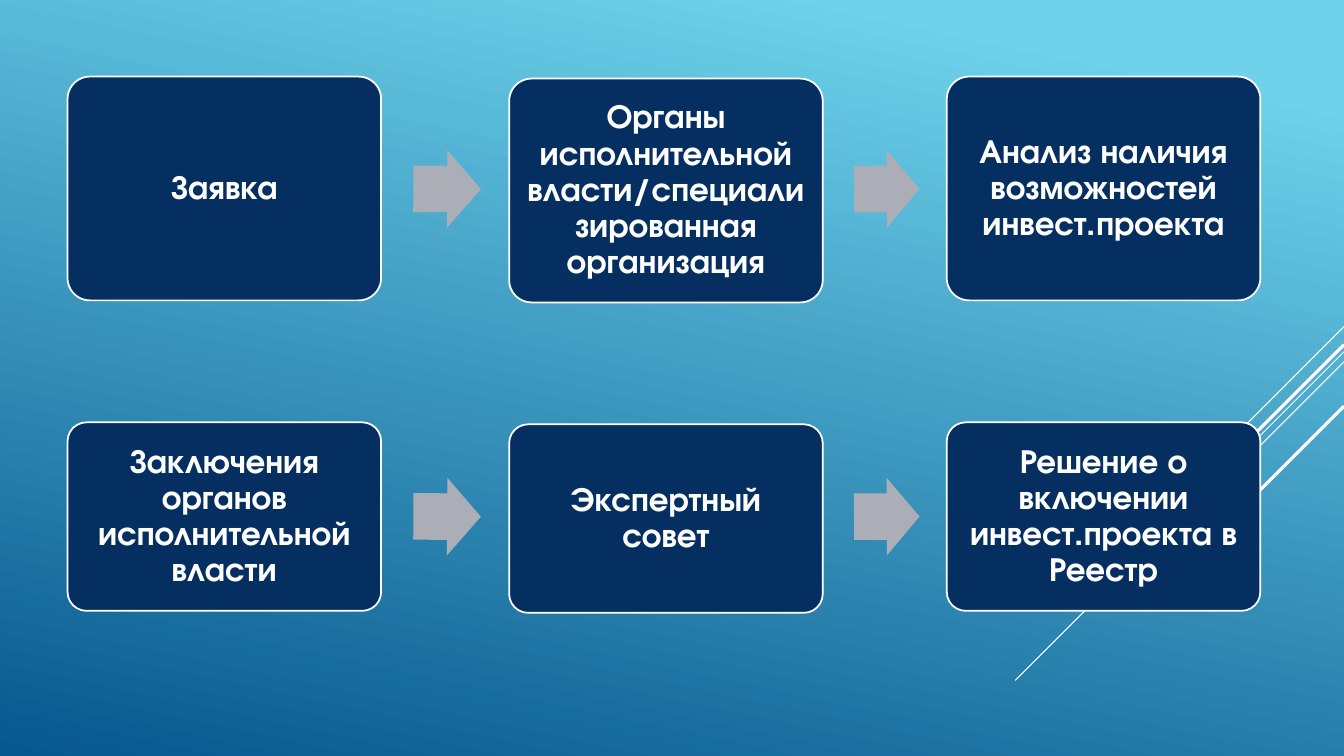
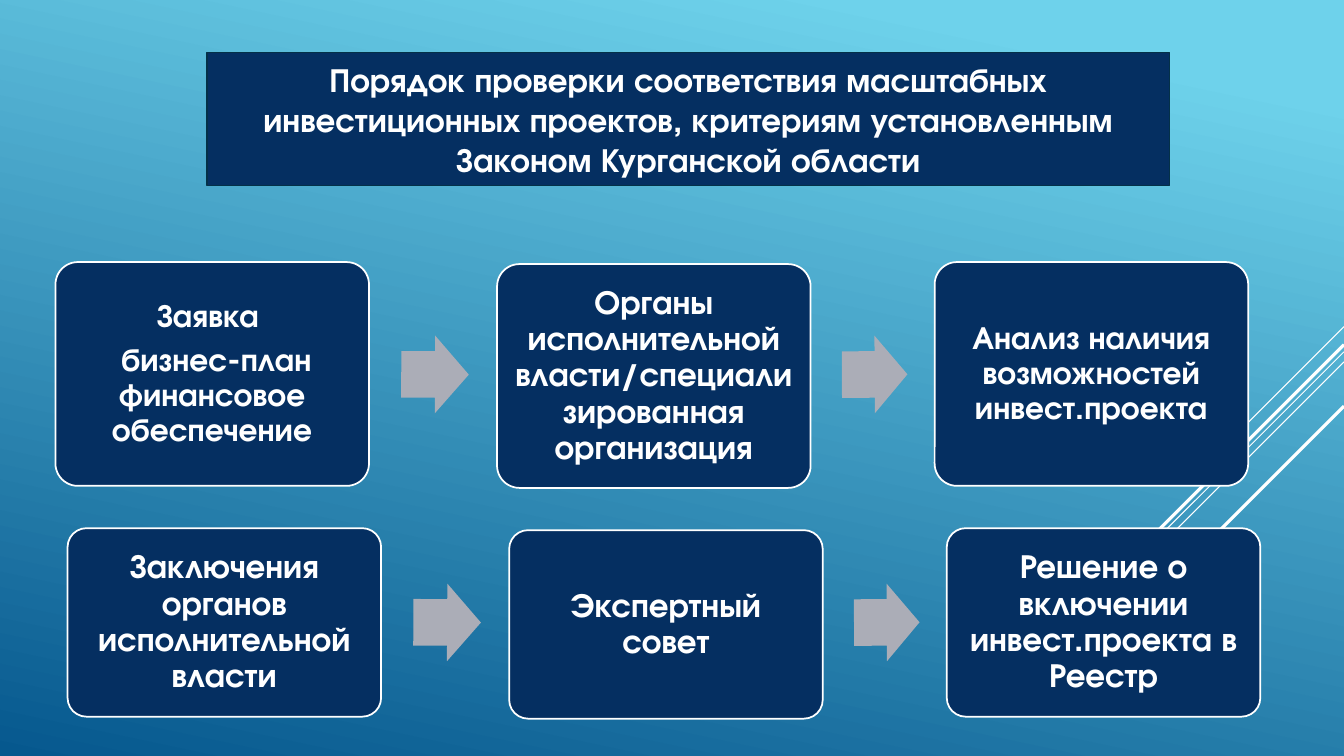
from dataclasses import dataclass
from typing import Any

from lxml import etree
from pptx import Presentation
from pptx.dml.color import RGBColor
from pptx.enum.shapes import MSO_CONNECTOR, MSO_SHAPE
from pptx.enum.text import MSO_ANCHOR, MSO_AUTO_SIZE, PP_ALIGN
from pptx.oxml.ns import qn
from pptx.util import Emu, Pt

ROUNDED = MSO_SHAPE.ROUNDED_RECTANGLE
RIGHT_ARROW = MSO_SHAPE.RIGHT_ARROW
STRAIGHT = MSO_CONNECTOR.STRAIGHT
MIDDLE = MSO_ANCHOR.MIDDLE
NO_AUTOFIT = MSO_AUTO_SIZE.NONE
CENTER = PP_ALIGN.CENTER

EMU_PER_PX = 9144  # 100 px to the inch
SLIDE_WIDTH, SLIDE_HEIGHT = 1333, 750
TITLE_ONLY_LAYOUT, BLANK_LAYOUT = 5, 6
FIRST_STRIPE_ID = 100


@dataclass(frozen=True)
class Theme:
    font: str = "TeX Gyre Adventor"
    sky: str = "6ED2EB"
    deep: str = "06588E"
    navy: str = "052F61"
    title_edge: str = "043148"
    white: str = "FFFFFF"
    arrow: str = "ABADB7"
    text_size: int = 24
    small_size: int = 23
    outline: float = 1.25


@dataclass(frozen=True)
class Stripe:
    """A diagonal from the right slide edge down to the left at 45 degrees."""
    top: int
    length: int
    weight: float


@dataclass(frozen=True)
class Step:
    paragraphs: tuple[str, ...]
    size: int


@dataclass(frozen=True)
class FlowRow:
    left: int
    top: int
    height: int
    steps: tuple[Step, ...]


@dataclass(frozen=True)
class FlowSlide:
    title: str
    rows: tuple[FlowRow, ...]


@dataclass(frozen=True)
class Arrow:
    offset: int
    width: int
    rotation: float


THEME = Theme()
STRIPES = (
    Stripe(324, 100, 0.75),
    Stripe(349, 326, 0.75),
    Stripe(359, 207, 0.75),
    Stripe(342, 191, 2.25),
    Stripe(403, 139, 2.25),
)

BOX_WIDTH = 311
BOX_OFFSETS = ((0, 0), (438, 2), (872, 0))
BOX_INSET = 10
ARROW_HEIGHT = 77
ARROWS = (Arrow(343, 67, 0.3), Arrow(780, 65, 359.7))
TITLE_BOX = (205, 52, 955, 132)

AUTHORITIES = Step(
    ("Органы исполнительной власти/специализированная организация",), THEME.text_size)
ANALYSIS_TEXT = ("Анализ наличия возможностей инвест.проекта",)
DECISION_STEPS = (
    Step(("Заключения органов исполнительной власти",), THEME.text_size),
    Step(("Экспертный совет",), THEME.text_size),
    Step(("Решение о включении инвест.проекта в Реестр",), THEME.text_size),
)
APPLICATION_STEPS = (
    Step(("Заявка",), THEME.text_size),
    AUTHORITIES,
    Step(ANALYSIS_TEXT, THEME.text_size),
)
DETAILED_STEPS = (
    Step(("Заявка ", " бизнес-план финансовое обеспечение"), THEME.small_size),
    AUTHORITIES,
    Step(ANALYSIS_TEXT, THEME.small_size),
)
SLIDES = (
    FlowSlide("", (
        FlowRow(67, 419, 187, DECISION_STEPS),
        FlowRow(67, 76, 222, APPLICATION_STEPS),
    )),
    FlowSlide(
        "Порядок проверки соответствия масштабных инвестиционных проектов, "
        "критериям установленным Законом Курганской области",
        (
            FlowRow(67, 524, 187, DECISION_STEPS),
            FlowRow(55, 260, 222, DETAILED_STEPS),
        )),
)


def px(length: int) -> Emu:
    return Emu(length * EMU_PER_PX)


def color(value: str) -> RGBColor:
    return RGBColor.from_string(value)


def apply_format(target: Any, values: dict[str, Any]) -> None:
    for name, value in values.items():
        setattr(target, name, value)


def paint(shape: Any, fill: str, edge: str = "") -> None:
    shape.fill.solid()
    shape.fill.fore_color.rgb = color(fill)
    if edge:
        shape.line.color.rgb = color(edge)
        shape.line.width = Pt(THEME.outline)
    else:
        shape.line.fill.background()


def write_text(shape: Any, paragraphs: tuple[str, ...], size: int,
               frame_format: dict[str, Any], paragraph_format: dict[str, Any]) -> None:
    frame = shape.text_frame
    apply_format(frame, {"word_wrap": True, "auto_size": NO_AUTOFIT,
                         "vertical_anchor": MIDDLE, **frame_format})
    for index, text in enumerate(paragraphs):
        paragraph = frame.add_paragraph() if index else frame.paragraphs[0]
        apply_format(paragraph, {"alignment": CENTER, **paragraph_format})
        run = paragraph.add_run()
        run.text = text
        apply_format(run.font, {"name": THEME.font, "size": Pt(size), "bold": True})
        run.font.color.rgb = color(THEME.white)


def set_background(master: Any) -> None:
    fill = master.background.fill
    fill.gradient()
    fill.gradient_angle = 258
    stops = ((0.1, THEME.sky), (1.0, THEME.deep))
    for stop, (position, value) in zip(fill.gradient_stops, stops):
        stop.position = position
        stop.color.rgb = color(value)


def add_master_stripes(master: Any, slide: Any) -> None:
    """Draw the stripes on a slide, then move them to the master all slides share."""
    for index, stripe in enumerate(STRIPES):
        connector = slide.shapes.add_connector(
            STRAIGHT, px(SLIDE_WIDTH), px(stripe.top),
            px(SLIDE_WIDTH - stripe.length), px(stripe.top + stripe.length))
        connector.line.color.rgb = color(THEME.white)
        connector.line.width = Pt(stripe.weight)
        element = connector.element
        etree.SubElement(element.spPr, qn("a:effectLst"))
        element.nvCxnSpPr.cNvPr.set("id", str(FIRST_STRIPE_ID + index))
        master.element.cSld.spTree.append(element)


def add_step(slide: Any, step: Step, left: int, top: int, height: int) -> None:
    box = slide.shapes.add_shape(ROUNDED, px(left), px(top), px(BOX_WIDTH), px(height))
    box.shadow.inherit = False
    box.adjustments[0] = 0.1
    paint(box, THEME.navy, THEME.white)
    margins = {f"margin_{side}": px(BOX_INSET)
               for side in ("left", "top", "right", "bottom")}
    write_text(box, step.paragraphs, step.size, margins,
               {"line_spacing": 0.9, "space_after": Pt(7)})


def add_arrow(slide: Any, arrow: Arrow, row: FlowRow) -> None:
    top = row.top + (row.height - ARROW_HEIGHT + 1) // 2
    shape = slide.shapes.add_shape(
        RIGHT_ARROW, px(row.left + arrow.offset), px(top),
        px(arrow.width), px(ARROW_HEIGHT))
    shape.shadow.inherit = False
    shape.adjustments[0] = 0.6
    shape.adjustments[1] = 0.5
    shape.rotation = arrow.rotation
    paint(shape, THEME.arrow)


def add_flow_row(slide: Any, row: FlowRow) -> None:
    for step, (offset, drop) in zip(row.steps, BOX_OFFSETS):
        add_step(slide, step, row.left + offset, row.top + drop, row.height)
    for arrow in ARROWS:
        add_arrow(slide, arrow, row)


def format_title(slide: Any, text: str) -> None:
    title = slide.shapes.title
    apply_format(title, dict(zip(("left", "top", "width", "height"),
                                 map(px, TITLE_BOX))))
    paint(title, THEME.navy, THEME.title_edge)
    write_text(title, (text,), THEME.text_size, {}, {})


def main() -> None:
    presentation = Presentation()
    presentation.slide_width = px(SLIDE_WIDTH)
    presentation.slide_height = px(SLIDE_HEIGHT)
    master = presentation.slide_master
    set_background(master)
    for index, content in enumerate(SLIDES):
        layout = TITLE_ONLY_LAYOUT if content.title else BLANK_LAYOUT
        slide = presentation.slides.add_slide(presentation.slide_layouts[layout])
        if index == 0:
            add_master_stripes(master, slide)
        if content.title:
            format_title(slide, content.title)
        for row in content.rows:
            add_flow_row(slide, row)
    presentation.save("out.pptx")


if __name__ == "__main__":
    main()
